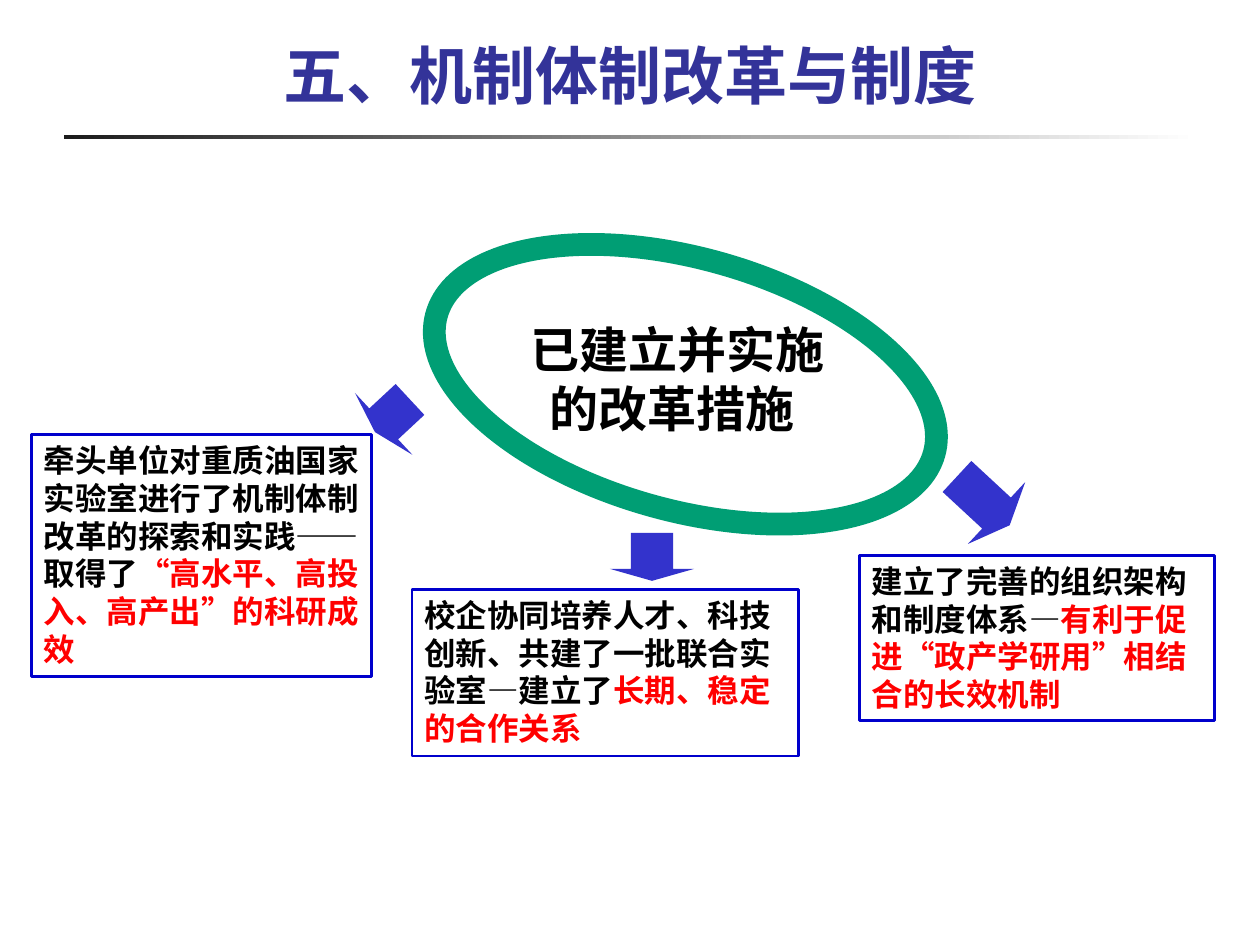
from dataclasses import dataclass

from lxml import etree
from pptx import Presentation
from pptx.dml.color import RGBColor
from pptx.enum import shapes, text
from pptx.oxml.ns import qn
from pptx.util import Inches, Pt


@dataclass(frozen=True)
class Theme:
    font: str = "Noto Sans CJK SC"
    title: str = "333399"
    ink: str = "000000"
    accent: str = "FF0000"
    border: str = "0000CC"
    arrow: str = "3333CC"
    ring: str = "009E74"
    rule_from: str = "1C1C1C"
    rule_to: str = "FFFFFF"
    title_pt: int = 36
    center_pt: int = 28
    body_pt: int = 18


theme = Theme()


def rgb(value):
    return RGBColor.from_string(value)


def write(p, size, *parts):
    """Fill a paragraph with bold (text, colour) runs."""
    p.line_spacing = Pt(size * 1.2)
    for words, color in parts:
        r = p.add_run()
        r.text = words
        r.font.size, r.font.bold, r.font.name = Pt(size), True, theme.font
        r.font.color.rgb = rgb(color)
        ea = etree.Element(qn("a:ea"), typeface=theme.font)
        r.font._element.find(qn("a:latin")).addnext(ea)


prs = Presentation()
prs.slide_width, prs.slide_height = Inches(10), Inches(7.5)
s = prs.slides.add_slide(prs.slide_layouts[5])

# Title
sp = s.shapes.title
sp.left, sp.top, sp.width, sp.height = Inches(0), Inches(0.08), Inches(10), Inches(0.87)
tf = sp.text_frame
tf.vertical_anchor = text.MSO_ANCHOR.BOTTOM
tf.margin_bottom = Inches(0.06)
p = tf.paragraphs[0]
p.alignment = text.PP_ALIGN.CENTER
write(p, theme.title_pt, ("五、机制体制改革与制度", theme.title))

# Fading rule under the title
sp = s.shapes.add_shape(shapes.MSO_SHAPE.RECTANGLE,
                        Inches(0.51), Inches(1.07), Inches(9), Inches(0.03))
sp.shadow.inherit = False
sp.line.fill.background()
sp.fill.gradient()
sp.fill.gradient_angle = 0
for stop, color in zip(sp.fill.gradient_stops, (theme.rule_from, theme.rule_to)):
    stop.color.rgb = rgb(color)

# Tilted ring
sp = s.shapes.add_shape(shapes.MSO_SHAPE.OVAL,
                        Inches(3.39), Inches(2.05), Inches(4.1), Inches(2))
sp.shadow.inherit = False
sp.rotation = 15.6
sp.fill.background()
sp.line.color.rgb = rgb(theme.ring)
sp.line.width = Pt(13)

# Text inside the ring
sp = s.shapes.add_textbox(Inches(3.93), Inches(2.49), Inches(2.89), Inches(1.04))
tf = sp.text_frame
tf.word_wrap = True
p = tf.paragraphs[0]
p.alignment = text.PP_ALIGN.CENTER
write(p, theme.center_pt, ("已建立并实施的改革措施 ", theme.ink))

# Measures: box, plain words, highlighted words
measures = [
    ((3.27, 4.68, 3.07, 1.32),
     "校企协同培养人才、科技创新、共建了一批联合实验室—建立了", "长期、稳定的合作关系"),
    ((6.82, 4.41, 2.82, 1.31),
     "建立了完善的组织架构和制度体系—", "有利于促进“政产学研用”相结合的长效机制"),
    ((0.25, 3.45, 2.7, 1.92),
     "牵头单位对重质油国家实验室进行了机制体制改革的探索和实践——取得了",
     "“高水平、高投入、高产出”的科研成效"),
]
for box, plain, strong in measures:
    sp = s.shapes.add_shape(shapes.MSO_SHAPE.RECTANGLE, *map(Inches, box))
    sp.shadow.inherit = False
    sp.fill.background()
    sp.line.color.rgb = rgb(theme.border)
    sp.line.width = Pt(1.5)
    tf = sp.text_frame
    tf.word_wrap = True
    tf.vertical_anchor = text.MSO_ANCHOR.TOP
    tf.margin_right = Inches(0.08)
    p = tf.paragraphs[0]
    p.alignment = text.PP_ALIGN.LEFT
    write(p, theme.body_pt, (plain, theme.ink), (strong, theme.accent))

# Arrows from the ring to the boxes: left, top, height, rotation
for left, top, height, angle in ((2.78, 3.11, 0.38, 47.1),
                                 (4.84, 4.23, 0.38, 0),
                                 (7.47, 3.69, 0.57, 312.8)):
    sp = s.shapes.add_shape(shapes.MSO_SHAPE.DOWN_ARROW, Inches(left), Inches(top),
                            Inches(0.67), Inches(height))
    sp.shadow.inherit = False
    sp.adjustments[0], sp.adjustments[1] = 0.5, 0.25
    sp.rotation = angle
    sp.fill.solid()
    sp.fill.fore_color.rgb = rgb(theme.arrow)
    sp.line.fill.background()

prs.save("out.pptx")
